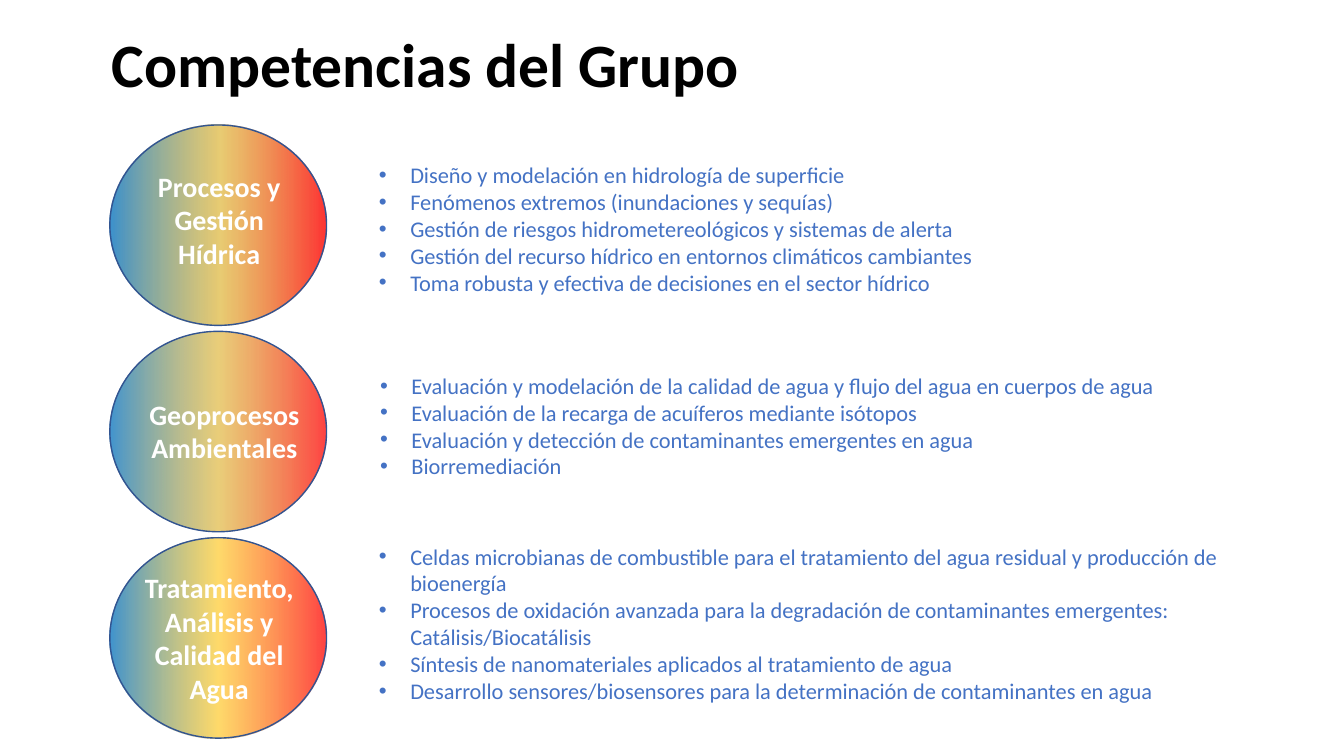
from lxml import etree
from pptx import Presentation
from pptx.dml.color import RGBColor
from pptx.enum.shapes import MSO_SHAPE
from pptx.enum.text import MSO_ANCHOR, PP_ALIGN
from pptx.oxml import parse_xml
from pptx.oxml.ns import nsdecls, qn
from pptx.util import Cm, Pt

ELLIPSE = MSO_SHAPE.OVAL
LEFT, CENTER = PP_ALIGN.LEFT, PP_ALIGN.CENTER
TOP, MIDDLE = MSO_ANCHOR.TOP, MSO_ANCHOR.MIDDLE

FONT = "Calibri"
COLORS = {
    "title": "000000",
    "list": "4472C4",
    "label": "FFFFFF",
    "outline": "325491",
    "red": "FF0000",
    "ochre": "D7A200",
    "amber": "FFC000",
    "blue": "0070C0",
}

CIRCLE_LEFT, CIRCLE_TOP, CIRCLE_W, CIRCLE_H = 2.77, 3.15, 5.46, 5.05
PITCH = 5.2
INDENT = 0.79

# label and list: (left, top, width, height) in cm from the circle's corner
# stops: (position %, colour, opacity %)
AREAS = [
    {
        "label": "Procesos y Gestión Hídrica",
        "label_box": (0.81, 0.99, 3.89, 2.82),
        "stops": [(0, "red", 80), (49, "ochre", 55), (100, "blue", 77)],
        "list_box": (6.53, 0.79, 16.99, 4.09),
        "items": [
            "Diseño y modelación en hidrología de superficie",
            "Fenómenos extremos (inundaciones y sequías)",
            "Gestión de riesgos hidrometereológicos y sistemas de alerta",
            "Gestión del recurso hídrico en entornos climáticos cambiantes",
            "Toma robusta y efectiva de decisiones en el sector hídrico",
        ],
    },
    {
        "label": "Geoprocesos Ambientales",
        "label_box": (0.69, 1.53, 4.39, 1.96),
        "stops": [(0, "red", 74), (50, "ochre", 52), (100, "blue", 74)],
        "list_box": (6.56, 0.9, 21.26, 3.68),
        "items": [
            "Evaluación y modelación de la calidad de agua y flujo del agua en cuerpos de agua",
            "Evaluación de la recarga de acuíferos mediante isótopos",
            "Evaluación y detección de contaminantes emergentes en agua",
            "Biorremediación",
        ],
    },
    {
        "label": "Tratamiento, Análisis y Calidad del Agua",
        "label_box": (0.56, 0.7, 4.39, 3.68),
        "stops": [(0, "red", 74), (50, "amber", 58), (100, "blue", 75)],
        "list_box": (6.53, 0, 23.52, 4.9),
        "items": [
            "Celdas microbianas de combustible para el tratamiento del agua residual y producción de bioenergía",
            "Procesos de oxidación avanzada para la degradación de contaminantes emergentes: Catálisis/Biocatálisis",
            "Síntesis de nanomateriales aplicados al tratamiento de agua",
            "Desarrollo sensores/biosensores para la determinación de contaminantes en agua",
        ],
    },
]


def rgb(name):
    return RGBColor.from_string(COLORS[name])


def add_bullet(p):
    pPr = p._p.get_or_add_pPr()
    pPr.set("marL", str(Cm(INDENT)))
    pPr.set("indent", str(-Cm(INDENT)))
    etree.SubElement(pPr, qn("a:buFont")).set("typeface", "Arial")
    etree.SubElement(pPr, qn("a:buChar")).set("char", "•")


def add_text(slide, box, lines, size, color, bold=False, align=LEFT,
             anchor=TOP, spacing=None, bullets=False):
    """Add a text box with one paragraph per line; box is in cm."""
    tf = slide.shapes.add_textbox(*map(Cm, box)).text_frame
    tf.word_wrap = True
    tf.vertical_anchor = anchor
    for i, line in enumerate(lines):
        p = tf.add_paragraph() if i else tf.paragraphs[0]
        p.alignment = align
        if spacing:
            p.line_spacing = spacing
        if bullets:
            add_bullet(p)
        r = p.add_run()
        r.text = line
        r.font.name = FONT
        r.font.size = Pt(size)
        r.font.bold = bold
        r.font.color.rgb = rgb(color)


def gradient_fill(sp, stops):
    """Fill a shape with translucent stops running from right to left."""
    gs = "".join(
        f'<a:gs pos="{pos * 1000}"><a:srgbClr val="{COLORS[color]}">'
        f'<a:alpha val="{opacity * 1000}"/></a:srgbClr></a:gs>'
        for pos, color, opacity in stops
    )
    fill = parse_xml(
        f'<a:gradFill {nsdecls("a")} rotWithShape="1"><a:gsLst>{gs}</a:gsLst>'
        '<a:lin ang="10800000" scaled="0"/></a:gradFill>'
    )
    sp._element.spPr.find(qn("a:prstGeom")).addnext(fill)


def add_circle(slide, box, stops):
    sp = slide.shapes.add_shape(ELLIPSE, *map(Cm, box))
    sp.shadow.inherit = False
    gradient_fill(sp, stops)
    sp.line.color.rgb = rgb("outline")
    sp.line.width = Pt(1)


def add_area(slide, box, area):
    """Add a circle in the box, its label, and the list to its right."""
    def offset(part):
        dx, dy, w, h = part
        return box[0] + dx, box[1] + dy, w, h

    add_circle(slide, box, area["stops"])
    add_text(slide, offset(area["label_box"]), [area["label"]], 20, "label",
             bold=True, align=CENTER)
    add_text(slide, offset(area["list_box"]), area["items"], 16, "list",
             bullets=True)


def add_title(slide, box):
    add_text(slide, box, ["Competencias del Grupo"], 44, "title", bold=True,
             anchor=MIDDLE, spacing=0.9)


def main():
    prs = Presentation()
    prs.slide_width, prs.slide_height = Cm(33.87), Cm(19.05)
    slide = prs.slides.add_slide(prs.slide_layouts[6])
    add_title(slide, (2.57, -0.13, 29.21, 3.68))
    for i, area in enumerate(AREAS):
        box = (CIRCLE_LEFT, CIRCLE_TOP + i * PITCH, CIRCLE_W, CIRCLE_H)
        add_area(slide, box, area)
    prs.save("out.pptx")


if __name__ == "__main__":
    main()
